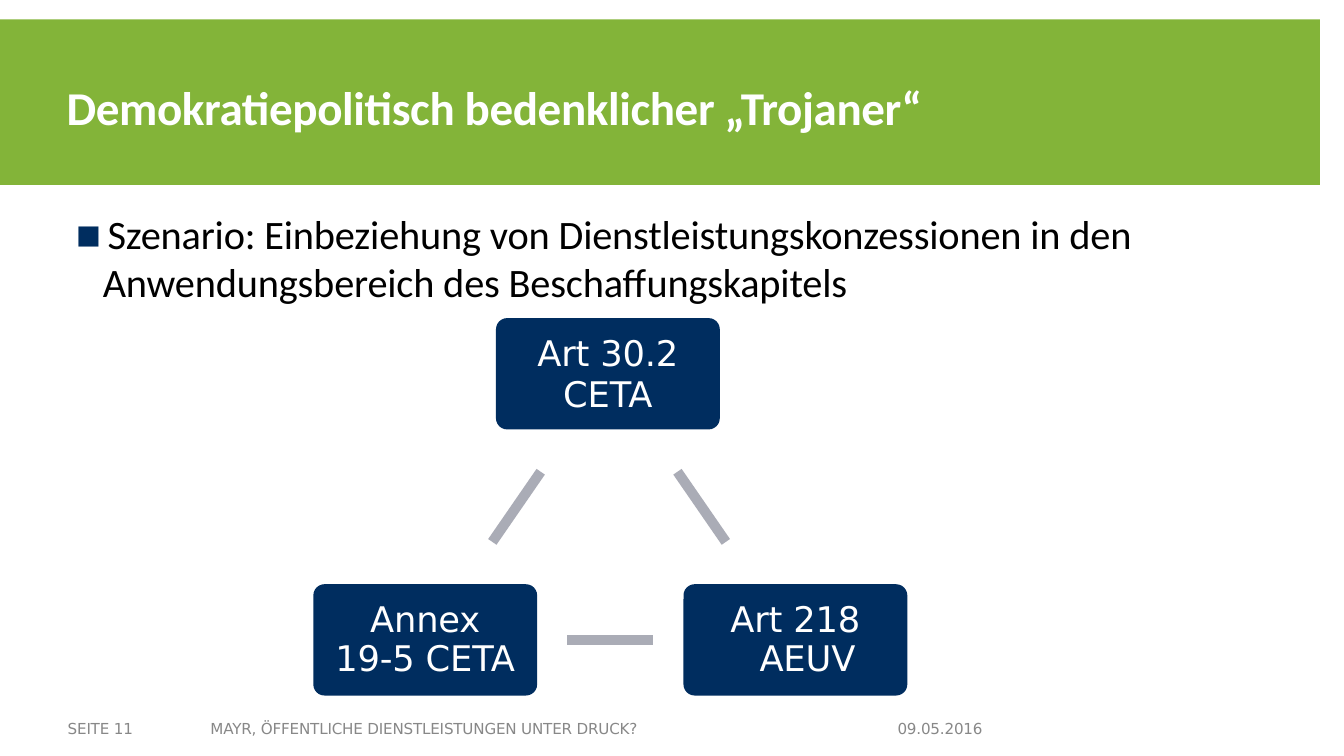
import pptx
import pptx.util
import pptx.dml.color
import pptx.enum.shapes
import pptx.enum.text
import pptx.oxml

Inches = pptx.util.Inches
Pt = pptx.util.Pt
ALIGN = pptx.enum.text.PP_ALIGN
SHAPE = pptx.enum.shapes.MSO_SHAPE
ANCHOR = pptx.enum.text.MSO_ANCHOR
NS = 'xmlns:a="http://schemas.openxmlformats.org/drawingml/2006/main"'

COLORS = {
    "green": "83B439",
    "navy": "002D5F",
    "line": "AAACB6",
    "foot": "888888",
    "white": "FFFFFF",
    "black": "000000",
}


def color(name):
    return pptx.dml.color.RGBColor.from_string(COLORS[name])


class Deck:
    head = "Calibri"
    sans = "DejaVu Sans"

    def __init__(self, wide, high):
        self.prs = pptx.Presentation()
        self.prs.slide_width = Inches(wide)
        self.prs.slide_height = Inches(high)
        self.slide = self.prs.slides.add_slide(self.prs.slide_layouts[5])

    def style(self, para, font, size, shade, bold=False, space=-10):
        for run in para.runs:
            run.font.name = font
            run.font.size = Pt(size)
            run.font.bold = bold
            run.font.color.rgb = color(shade)
            run.font._element.set("spc", str(space))

    def frame(self, shape, top=0):
        frame = shape.text_frame
        frame.margin_left = frame.margin_right = frame.margin_bottom = 0
        frame.margin_top = Inches(top)
        frame.auto_size = pptx.enum.text.MSO_AUTO_SIZE.NONE
        frame.vertical_anchor = ANCHOR.TOP
        return frame

    def block(self, kind, x, y, w, h, fill):
        shape = self.slide.shapes.add_shape(
            kind, Inches(x), Inches(y), Inches(w), Inches(h))
        shape.shadow.inherit = False
        shape.fill.solid()
        shape.fill.fore_color.rgb = color(fill)
        shape.line.fill.background()
        return shape

    def title(self, text, x, y, w, h):
        shape = self.slide.shapes.title
        shape.left, shape.top = Inches(x), Inches(y)
        shape.width, shape.height = Inches(w), Inches(h)
        frame = self.frame(shape, 0.2)
        frame.text = text
        para = frame.paragraphs[0]
        para.alignment = ALIGN.LEFT
        self.style(para, self.head, 28, "white", True, -20)

    def text(self, x, y, w, h, lines, font, size, shade, wrap=True):
        shape = self.slide.shapes.add_textbox(
            Inches(x), Inches(y), Inches(w), Inches(h))
        frame = self.frame(shape)
        frame.word_wrap = wrap
        frame.text = "\n".join(lines)
        for para in frame.paragraphs:
            self.style(para, font, size, shade)
        return frame.paragraphs

    def indent(self, para, left, first=0):
        props = para._p.get_or_add_pPr()
        props.set("marL", str(Inches(left)))
        props.set("indent", str(Inches(first)))
        return props

    def bullet(self, para, left, first):
        props = self.indent(para, left, first)
        for xml in (f'<a:buClr {NS}><a:srgbClr val="{COLORS["navy"]}"/></a:buClr>',
                    f'<a:buFont {NS} typeface="{self.sans}"/>',
                    f'<a:buChar {NS} char="▪"/>'):
            props.append(pptx.oxml.parse_xml(xml))

    def node(self, x, y, lines, pitch, shift=0):
        shape = self.block(SHAPE.ROUNDED_RECTANGLE, x, y, 1.85, 0.92, "navy")
        shape.adjustments[0] = 0.1
        frame = self.frame(shape)
        frame.vertical_anchor = ANCHOR.MIDDLE
        frame.text = "\n".join(lines)
        for para in frame.paragraphs:
            para.alignment = ALIGN.CENTER
            para.line_spacing = Pt(pitch)
            self.style(para, self.sans, 21, "white")
        self.indent(frame.paragraphs[-1], shift)

    def link(self, x1, y1, x2, y2):
        line = self.slide.shapes.add_connector(
            pptx.enum.shapes.MSO_CONNECTOR.STRAIGHT,
            Inches(x1), Inches(y1), Inches(x2), Inches(y2))
        line.line.width = Pt(6)
        line.line.color.rgb = color("line")
        line._element.spPr.append(pptx.oxml.parse_xml(f"<a:effectLst {NS}/>"))


def main():
    deck = Deck(11.11, 6.25)

    # Title band, placed behind the title
    band = deck.block(SHAPE.RECTANGLE, 0, 0.16, 10.91, 1.37, "green")
    deck.slide.shapes.title._element.addprevious(band._element)
    deck.title("Demokratiepolitisch bedenklicher „Trojaner“", 0.55, 0.45, 10.02, 0.9)

    # Scenario
    first, second = deck.text(
        0.55, 1.73, 9.2, 0.85,
        ["Szenario: Einbeziehung von Dienstleistungskonzessionen in den",
         "Anwendungsbereich des Beschaffungskapitels"],
        deck.head, 24, "black")
    deck.bullet(first, 0.34, -0.27)
    deck.indent(second, 0.3)

    # Triangle of legal bases
    deck.node(4.1, 2.63, ["Art 30.2", "CETA"], 24)
    deck.node(5.65, 4.83, ["Art 218", "AEUV"], 23, 0.2)
    deck.node(2.59, 4.83, ["Annex", "19-5 CETA"], 23)
    for ends in ((4.47, 3.9, 4.07, 4.48), (5.6, 3.9, 6, 4.48), (4.69, 5.29, 5.4, 5.29)):
        deck.link(*ends)

    # Footer
    for x, w, words in ((0.55, 0.62, "SEITE 11"),
                        (1.73, 3.72, "MAYR, ÖFFENTLICHE DIENSTLEISTUNGEN UNTER DRUCK?"),
                        (7.41, 0.76, "09.05.2016")):
        para = deck.text(x, 5.96, w, 0.15, [words], deck.sans, 9, "foot", False)[0]
        para.line_spacing = Pt(10.2)
        deck.indent(para, 0.01)

    deck.prs.save("out.pptx")


if __name__ == "__main__":
    main()
